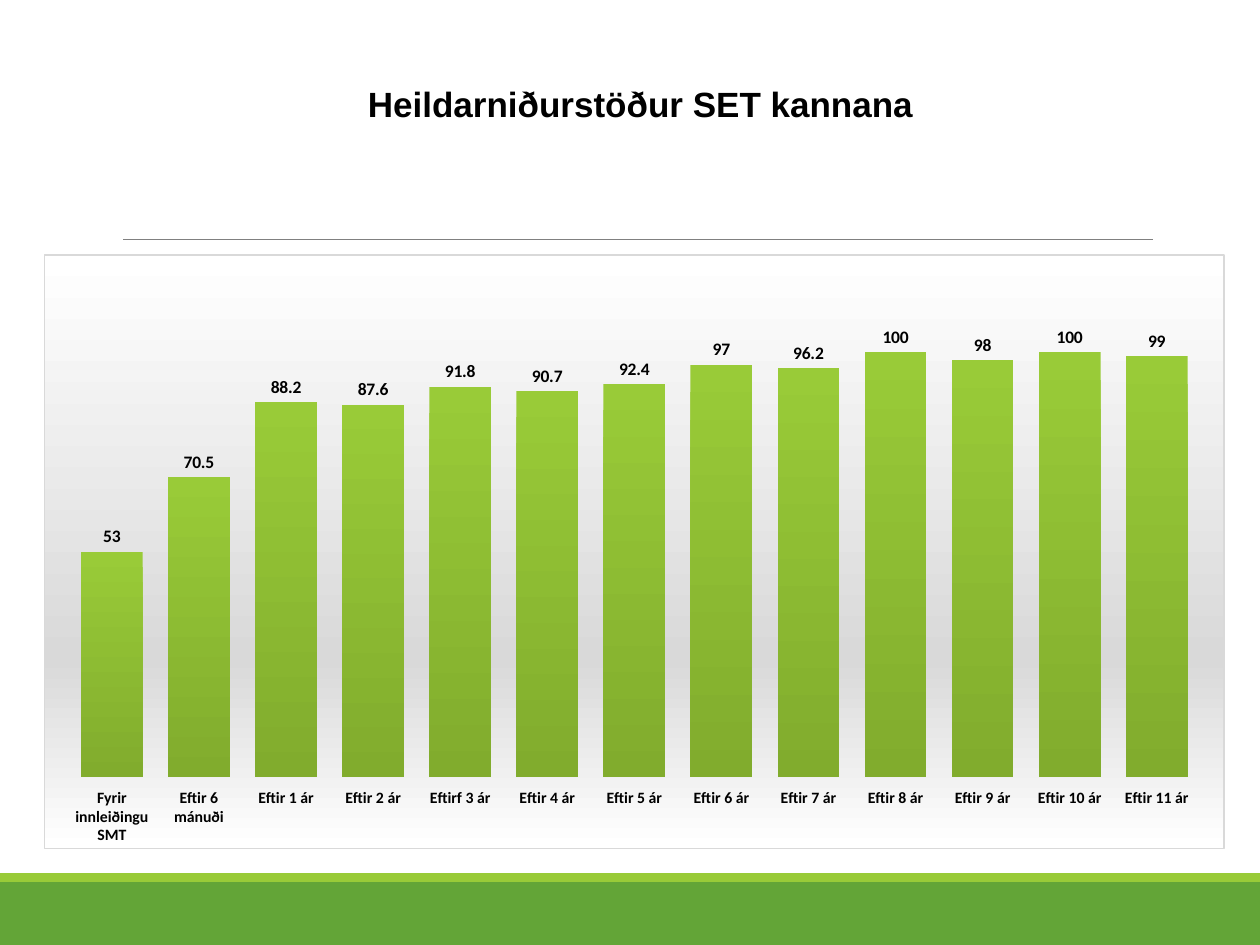
from dataclasses import dataclass

from lxml import etree
from pptx import Presentation
from pptx.chart.chart import Chart
from pptx.chart.data import CategoryChartData
from pptx.dml.color import RGBColor
from pptx.enum.chart import XL_CHART_TYPE, XL_LABEL_POSITION, XL_TICK_LABEL_POSITION, XL_TICK_MARK
from pptx.enum.shapes import MSO_CONNECTOR, MSO_SHAPE
from pptx.enum.text import MSO_ANCHOR, PP_ALIGN
from pptx.oxml import parse_xml
from pptx.oxml.ns import nsdecls, qn
from pptx.slide import Slide
from pptx.util import Pt

COLUMN = XL_CHART_TYPE.COLUMN_CLUSTERED
OUTSIDE_END = XL_LABEL_POSITION.OUTSIDE_END
LABELS_LOW = XL_TICK_LABEL_POSITION.LOW
NO_TICK = XL_TICK_MARK.NONE
STRAIGHT = MSO_CONNECTOR.STRAIGHT
RECTANGLE = MSO_SHAPE.RECTANGLE
MIDDLE = MSO_ANCHOR.MIDDLE
CENTER = PP_ALIGN.CENTER


@dataclass(frozen=True)
class Theme:
    text: str = "000000"
    rule: str = "808080"
    lime: str = "99CB38"
    dark_lime: str = "81AC2D"
    green: str = "63A537"
    white: str = "FFFFFF"
    gray: str = "D9D9D9"
    title_font: str = "Arial"
    chart_font: str = "Calibri"
    title_size: int = 20
    label_size: int = 10
    category_size: int = 9


@dataclass(frozen=True)
class Band:
    top: float
    height: float
    color: str


THEME = Theme()
SLIDE_WIDTH, SLIDE_HEIGHT = 720, 540
BANDS = [Band(504, 36, THEME.green), Band(499, 5, THEME.lime)]
RESULTS = {
    "Fyrir innleiðingu SMT": 53,
    "Eftir 6 mánuði": 70.5,
    "Eftir 1 ár": 88.2,
    "Eftir 2 ár": 87.6,
    "Eftirf 3 ár": 91.8,
    "Eftir 4 ár": 90.7,
    "Eftir 5 ár": 92.4,
    "Eftir 6 ár": 97,
    "Eftir 7 ár": 96.2,
    "Eftir 8 ár": 100,
    "Eftir 9 ár": 98,
    "Eftir 10 ár": 100,
    "Eftir 11 ár": 99,
}


def style_font(font, name: str, size: float, bold: bool = True) -> None:
    font.name = name
    font.size = Pt(size)
    font.bold = bold
    font.color.rgb = RGBColor.from_string(THEME.text)


def add_band(slide: Slide, band: Band) -> None:
    shape = slide.shapes.add_shape(RECTANGLE, 0, Pt(band.top), Pt(SLIDE_WIDTH), Pt(band.height))
    shape.shadow.inherit = False
    shape.fill.solid()
    shape.fill.fore_color.rgb = RGBColor.from_string(band.color)
    shape.line.fill.background()


def add_rule(slide: Slide) -> None:
    rule = slide.shapes.add_connector(STRAIGHT, Pt(70.5), Pt(136.8), Pt(658.8), Pt(136.8))
    rule.line.width = Pt(0.5)
    rule.line.color.rgb = RGBColor.from_string(THEME.rule)
    etree.SubElement(rule.element.spPr, qn("a:effectLst"))


def write_title(slide: Slide) -> None:
    title = slide.shapes.title
    title.left, title.top, title.width, title.height = Pt(65.5), Pt(43.2), Pt(601.2), Pt(31.7)
    frame = title.text_frame
    frame.text = "Heildarniðurstöður SET kannana"
    frame.vertical_anchor = MIDDLE
    paragraph = frame.paragraphs[0]
    paragraph.alignment = CENTER
    style_font(paragraph.font, THEME.title_font, THEME.title_size)


def style_chart_area(chart: Chart) -> None:
    stops = "".join(
        f'<a:gs pos="{percent * 1000}"><a:srgbClr val="{color}"/></a:gs>'
        for percent, color in [(0, THEME.white), (68, THEME.gray), (100, THEME.white)]
    )
    area = parse_xml(
        f'<c:spPr {nsdecls("c", "a")}>'
        f'<a:gradFill><a:gsLst>{stops}</a:gsLst><a:lin ang="5400000" scaled="0"/></a:gradFill>'
        f'<a:ln w="{Pt(0.75)}"><a:solidFill><a:srgbClr val="{THEME.gray}"/></a:solidFill></a:ln>'
        "</c:spPr>"
    )
    chart.element.find(qn("c:chart")).addnext(area)


def place_plot(chart: Chart, left: float, top: float, width: float, height: float) -> None:
    plot_area = chart.element.find(qn("c:chart")).find(qn("c:plotArea"))
    for old_layout in plot_area.findall(qn("c:layout")):
        plot_area.remove(old_layout)
    settings = {"layoutTarget": "inner", "xMode": "edge", "yMode": "edge",
                "x": left, "y": top, "w": width, "h": height}
    layout = etree.Element(qn("c:layout"))
    manual = etree.SubElement(layout, qn("c:manualLayout"))
    for name, value in settings.items():
        etree.SubElement(manual, qn(f"c:{name}")).set("val", str(value))
    plot_area.insert(0, layout)


def add_results_chart(slide: Slide) -> None:
    data = CategoryChartData()
    data.categories = RESULTS.keys()
    data.add_series("Series 1", RESULTS.values())
    chart = slide.shapes.add_chart(COLUMN, Pt(25.2), Pt(145.4), Pt(674.6), Pt(339.8), data).chart
    chart.has_title = False
    chart.has_legend = False
    style_font(chart.font, THEME.chart_font, THEME.label_size, bold=False)
    style_chart_area(chart)
    place_plot(chart, 0.02, 0.02, 0.96, 0.86)

    value_axis = chart.value_axis
    value_axis.minimum_scale, value_axis.maximum_scale = 0, 120
    value_axis.has_major_gridlines = False
    value_axis.visible = False
    category_axis = chart.category_axis
    category_axis.major_tick_mark = NO_TICK
    category_axis.tick_label_position = LABELS_LOW
    category_axis.format.line.fill.background()
    style_font(category_axis.tick_labels.font, THEME.chart_font, THEME.category_size)

    plot = chart.plots[0]
    plot.gap_width = 41
    plot.vary_by_categories = False
    fill = plot.series[0].format.fill
    fill.gradient()
    fill.gradient_angle = 270
    for stop, color in zip(fill.gradient_stops, [THEME.lime, THEME.dark_lime]):
        stop.color.rgb = RGBColor.from_string(color)
    plot.has_data_labels = True
    labels = plot.data_labels
    labels.show_value = True
    labels.position = OUTSIDE_END
    style_font(labels.font, THEME.chart_font, THEME.label_size)


def main() -> None:
    presentation = Presentation()
    presentation.slide_width, presentation.slide_height = Pt(SLIDE_WIDTH), Pt(SLIDE_HEIGHT)
    slide = presentation.slides.add_slide(presentation.slide_layouts[5])
    for band in BANDS:
        add_band(slide, band)
    add_rule(slide)
    write_title(slide)
    add_results_chart(slide)
    presentation.save("out.pptx")


if __name__ == "__main__":
    main()
